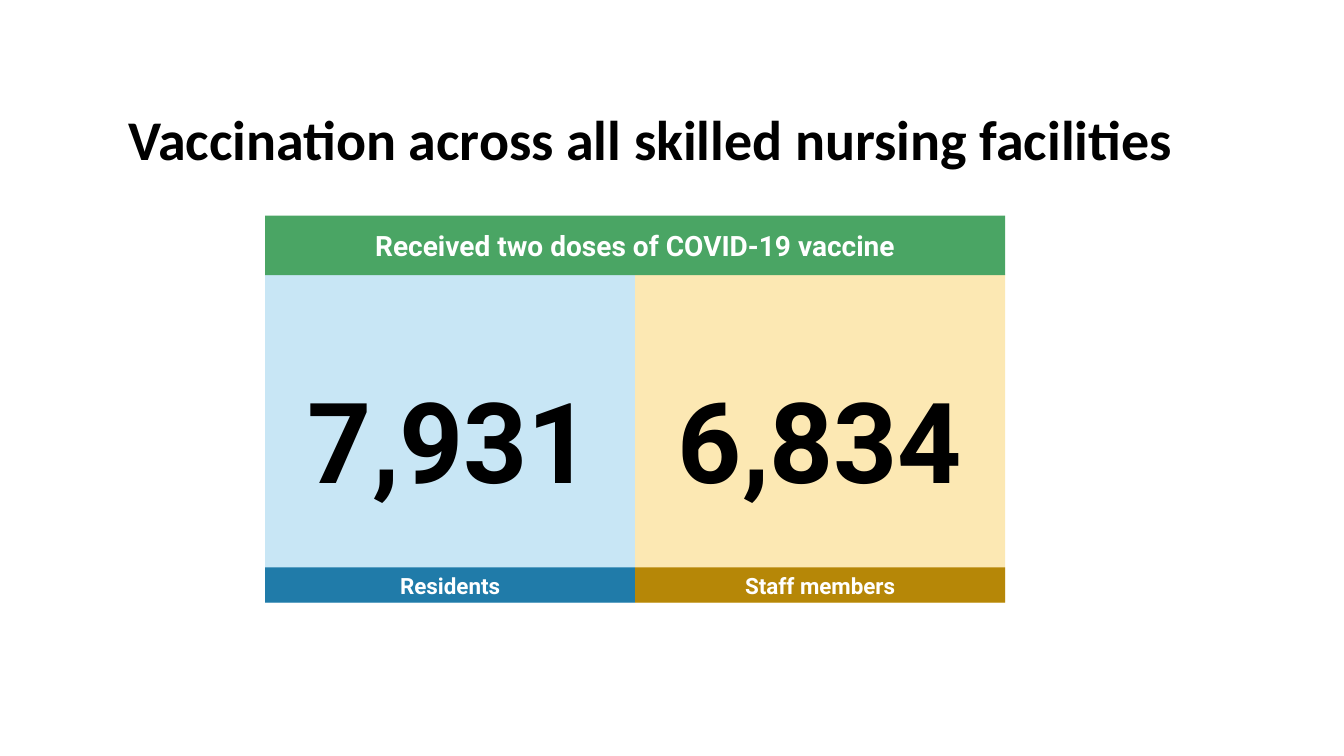
import pptx
import pptx.dml.color
import pptx.enum.shapes
import pptx.enum.text
import pptx.util

Inches = pptx.util.Inches
RGBColor = pptx.dml.color.RGBColor
ALIGN = pptx.enum.text.PP_ALIGN

BLACK = RGBColor(0x00, 0x00, 0x00)
WHITE = RGBColor(0xFF, 0xFF, 0xFF)
GREEN = RGBColor(0x4A, 0xA5, 0x64)
PALE_BLUE = RGBColor(0xC8, 0xE6, 0xF5)
BLUE = RGBColor(0x20, 0x7B, 0xA9)
PALE_YELLOW = RGBColor(0xFC, 0xE8, 0xB3)
OCHRE = RGBColor(0xB6, 0x87, 0x07)


def write(part, text, align, font_name, size, color):
    """Fill a shape with one bold, vertically centred paragraph."""
    frame = part.text_frame
    frame.word_wrap = True
    frame.auto_size = pptx.enum.text.MSO_AUTO_SIZE.NONE
    frame.vertical_anchor = pptx.enum.text.MSO_ANCHOR.MIDDLE
    paragraph = frame.paragraphs[0]
    paragraph.text = text
    paragraph.alignment = align
    font_format = {"name": font_name, "size": pptx.util.Pt(size), "bold": True}
    for attribute, value in font_format.items():
        setattr(paragraph.font, attribute, value)
    paragraph.font.color.rgb = color


def add_panel(left, top, width, height, fill, text, size, color):
    """Add a borderless rectangle with centred text."""
    panel = slide.shapes.add_shape(
        pptx.enum.shapes.MSO_SHAPE.RECTANGLE,
        Inches(left), Inches(top), Inches(width), Inches(height))
    panel.shadow.inherit = False
    panel.fill.solid()
    panel.fill.fore_color.rgb = fill
    panel.line.fill.background()
    write(panel, text, ALIGN.CENTER, "Roboto", size, color)


presentation = pptx.Presentation()
presentation.slide_width = Inches(13.33)
presentation.slide_height = Inches(7.5)
slide = presentation.slides.add_slide(presentation.slide_layouts[5])

# Title
title = slide.shapes.title
title_place = {"left": 1.17, "top": 0.53, "width": 11, "height": 1.76}
for side, inches in title_place.items():
    setattr(title, side, Inches(inches))
write(title, "Vaccination across all skilled nursing facilities",
      ALIGN.LEFT, "Calibri", 40, BLACK)
title.text_frame.paragraphs[0].line_spacing = 0.9

# Scorecard geometry
card_left, card_width = 2.63, 3.67
header_top, header_height = 2.14, 0.59
count_top, count_height = 2.72, 3.26
label_height = 0.35
label_top = count_top + count_height - label_height

groups = [
    ("7,931", "Residents", PALE_BLUE, BLUE),
    ("6,834", "Staff members", PALE_YELLOW, OCHRE),
]

# Counts with the group label along the bottom
for column, (count, label, count_fill, label_fill) in enumerate(groups):
    left = card_left + column * card_width
    add_panel(left, count_top, card_width, count_height, count_fill, count, 80, BLACK)
    add_panel(left, label_top, card_width, label_height, label_fill, label, 16, WHITE)

# Header across both columns
add_panel(card_left, header_top, len(groups) * card_width, header_height, GREEN,
          "Received two doses of COVID-19 vaccine", 20, WHITE)

presentation.save("out.pptx")
